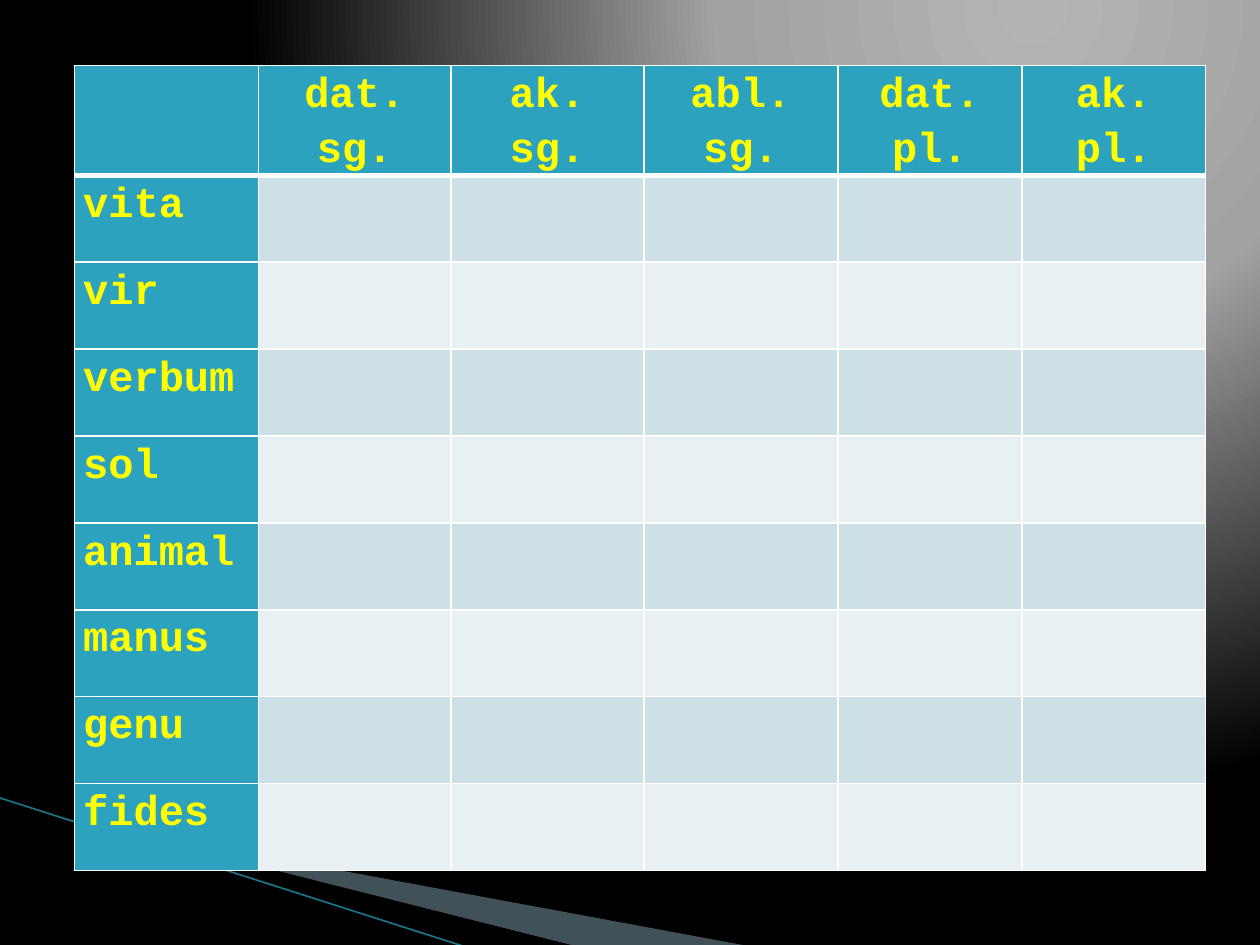
from dataclasses import dataclass

from lxml import etree
from pptx import Presentation
from pptx import util as u
from pptx.dml.color import RGBColor
from pptx.enum import shapes, text
from pptx.oxml import ns


@dataclass(frozen=True)
class Theme:
    font: str = "Courier New"
    size: float = 24
    label: str = "FFFF00"
    head: str = "2DA2BF"
    bands: tuple = ("CDE0E8", "E8F0F4")
    rule: str = "FFFFFF"
    thin: float = 1
    thick: float = 3
    wedge: str = "A0CBDC"
    shade: str = "000000"
    streak: str = "1B7488"
    glow: tuple = ((0, "B4B4B4"), (40, "A2A2A2"), (100, "000000"))


THEME = Theme()
WIDTH, HEIGHT = 10, 7.5
LEFT, TOP, ROW = 0.59, 0.52, 0.69
COLUMNS = (1.46, 1.53, 1.53, 1.54, 1.46, 1.46)
CASES = ("", "dat. sg.", "ak. sg.", "abl. sg.", "dat. pl.", "ak. pl.")
NOUNS = ("vita", "vir", "verbum", "sol", "animal", "manus", "genu", "fides")


def rgb(value):
    return RGBColor.from_string(value)


def apply(obj, values):
    for name, value in values.items():
        setattr(obj, name, value)


def child(parent, tag, **attrs):
    return etree.SubElement(parent, ns.qn(tag), attrs)


def paint_background(s):
    s.background.fill.gradient()
    grad = s.element.find(".//" + ns.qn("a:gradFill"))
    for part in list(grad):
        grad.remove(part)
    stops = child(grad, "a:gsLst")
    for position, color in THEME.glow:
        stop = child(stops, "a:gs", pos=str(position * 1000))
        child(stop, "a:srgbClr", val=color)
    path = child(grad, "a:path", path="circle")
    child(path, "a:fillToRect", l="65000", t="0", r="0", b="98000")


def add_wedge(s, points, color, alpha=100):
    start, *rest = [(u.Inches(x), u.Inches(y)) for x, y in points]
    builder = s.shapes.build_freeform(*start)
    builder.add_line_segments(rest, close=True)
    sp = builder.convert_to_shape()
    sp.shadow.inherit = False
    sp.fill.solid()
    sp.fill.fore_color.rgb = rgb(color)
    sp.line.fill.background()
    if alpha < 100:
        clr = sp.element.spPr.find(".//" + ns.qn("a:srgbClr"))
        child(clr, "a:alpha", val=str(alpha * 1000))


def add_streak(s, start, end):
    ends = [u.Inches(v) for v in (*start, *end)]
    line = s.shapes.add_connector(shapes.MSO_CONNECTOR.STRAIGHT, *ends)
    line.line.color.rgb = rgb(THEME.streak)
    line.line.width = u.Pt(0.95)
    child(line.element.spPr, "a:effectLst")


def set_borders(cell, row):
    widths = {"L": THEME.thin, "R": THEME.thin,
              "T": THEME.thick if row == 1 else THEME.thin,
              "B": THEME.thick if row == 0 else THEME.thin}
    tc_pr = cell._tc.get_or_add_tcPr()
    for side, width in widths.items():
        ln = child(tc_pr, f"a:ln{side}", w=str(u.Pt(width)))
        child(child(ln, "a:solidFill"), "a:srgbClr", val=THEME.rule)


def write_label(cell, label, align):
    apply(cell, {"margin_left": u.Inches(0.07), "margin_right": u.Inches(0.07),
                 "margin_top": 0, "margin_bottom": 0})
    p = cell.text_frame.paragraphs[0]
    apply(p, {"alignment": align, "line_spacing": 1.15})
    r = p.add_run()
    r.text = label
    apply(r.font, {"name": THEME.font, "size": u.Pt(THEME.size), "bold": True})
    r.font.color.rgb = rgb(THEME.label)


def add_declension_table(s):
    rows = [CASES] + [(noun,) + ("",) * (len(CASES) - 1) for noun in NOUNS]
    box = [u.Inches(v) for v in (LEFT, TOP, sum(COLUMNS), ROW * len(rows))]
    table = s.shapes.add_table(len(rows), len(CASES), *box).table
    table.first_col = True
    for column, width in zip(table.columns, COLUMNS):
        column.width = u.Inches(width)
    for i, labels in enumerate(rows):
        table.rows[i].height = u.Inches(ROW)
        align = text.PP_ALIGN.LEFT if i else text.PP_ALIGN.CENTER
        for j, label in enumerate(labels):
            cell = table.cell(i, j)
            set_borders(cell, i)
            cell.fill.solid()
            is_head = i == 0 or j == 0
            color = THEME.head if is_head else THEME.bands[(i - 1) % 2]
            cell.fill.fore_color.rgb = rgb(color)
            if label:
                write_label(cell, label, align)


def main():
    prs = Presentation()
    apply(prs, {"slide_width": u.Inches(WIDTH), "slide_height": u.Inches(HEIGHT)})
    s = prs.slides.add_slide(prs.slide_layouts[6])
    paint_background(s)
    add_wedge(s, [(0.55, 6.51), (5.95, 7.51), (4.56, 7.51), (0.55, 6.5)],
              THEME.wedge, alpha=40)
    add_wedge(s, [(0.53, 6.49), (4.57, 7.51), (3.72, 7.52), (0.54, 6.5)],
              THEME.shade)
    add_streak(s, (-0.01, 6.33), (3.71, 7.52))
    add_declension_table(s)
    prs.save("out.pptx")


if __name__ == "__main__":
    main()
